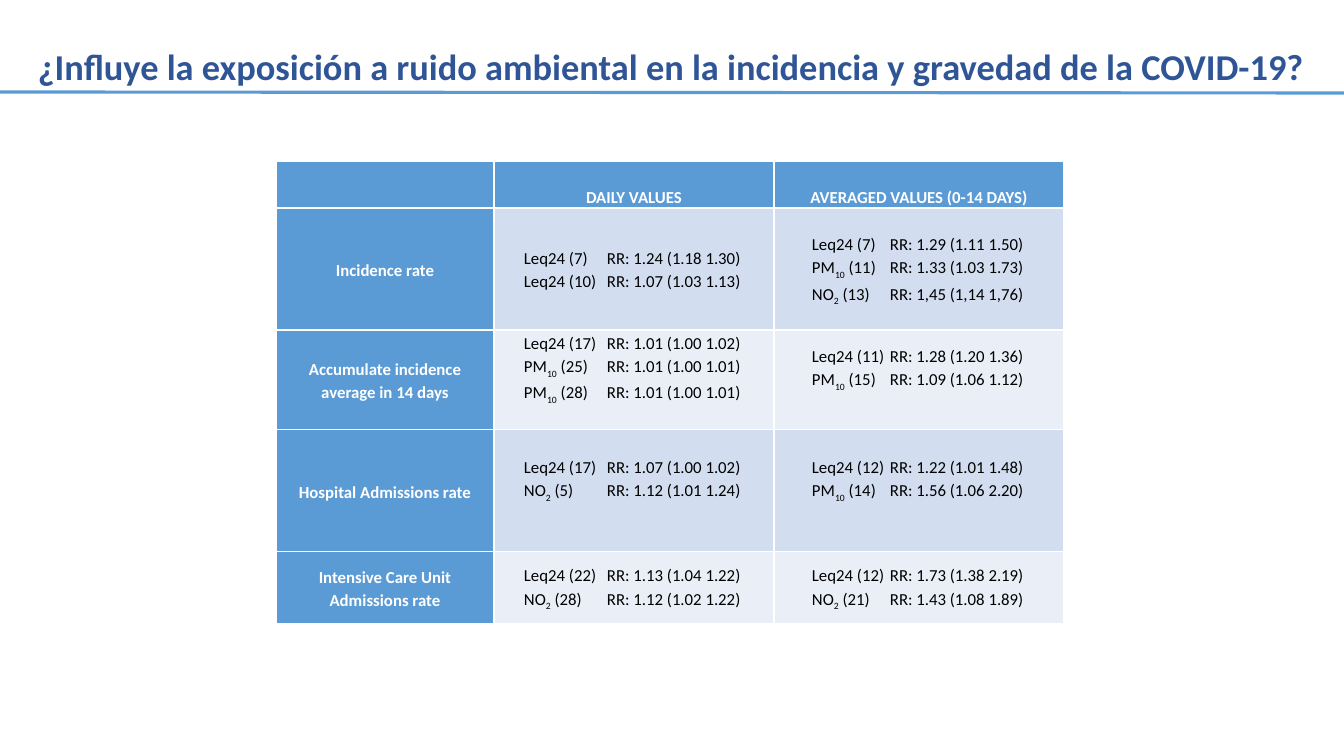
"""Slide with a table of COVID-19 risk ratios for noise and air pollution."""
from dataclasses import dataclass

from lxml import etree
from pptx import Presentation
from pptx.dml.color import RGBColor
from pptx.enum import shapes, text
from pptx.oxml import ns
from pptx.util import Pt

NAVY = RGBColor(0x2F, 0x55, 0x97)
BLUE = RGBColor(0x5B, 0x9B, 0xD5)
BAND = RGBColor(0xD2, 0xDE, 0xEF)
PALE = RGBColor(0xEA, 0xEF, 0xF7)
WHITE = RGBColor(0xFF, 0xFF, 0xFF)
BLACK = RGBColor(0, 0, 0)

WIDE, HIGH = 1344, 756
COLS = (218, 280, 290)
HEAD = 47
PAD = 7
LINE = 24


@dataclass(frozen=True)
class Risk:
    """Agent with its subscript, lag in days and risk ratio."""
    name: str
    sub: str
    lag: int
    ratio: str


@dataclass(frozen=True)
class Block:
    """Cell of risks with the lift from its middle, in px."""
    risks: tuple[Risk, ...]
    lift: int = 0


@dataclass(frozen=True)
class Rate:
    """Table row for one rate."""
    label: str
    high: int
    daily: Block
    mean: Block


@dataclass(frozen=True)
class Place:
    """Left margin and tab stop of a risk column, in px."""
    left: int
    tab: int


def leq(lag: int, ratio: str) -> Risk:
    """Return a noise risk."""
    return Risk("Leq24", "", lag, ratio)


def pm(lag: int, ratio: str) -> Risk:
    """Return a particle risk."""
    return Risk("PM", "10", lag, ratio)


def no(lag: int, ratio: str) -> Risk:
    """Return a nitrogen dioxide risk."""
    return Risk("NO", "2", lag, ratio)


PLACES = (Place(30, 83), Place(38, 78))
HEADS = ("", "DAILY VALUES", "AVERAGED VALUES (0-14 DAYS)")
RATES = (
    Rate("Incidence rate", 122,
         Block((leq(7, "1.24 (1.18 1.30)"), leq(10, "1.07 (1.03 1.13)"))),
         Block((leq(7, "1.29 (1.11 1.50)"), pm(11, "1.33 (1.03 1.73)"),
                no(13, "1,45 (1,14 1,76)")))),
    Rate("Accumulate incidence average in 14 days", 99,
         Block((leq(17, "1.01 (1.00 1.02)"), pm(25, "1.01 (1.00 1.01)"),
                pm(28, "1.01 (1.00 1.01)")), LINE),
         Block((leq(11, "1.28 (1.20 1.36)"), pm(15, "1.09 (1.06 1.12)")), LINE)),
    Rate("Hospital Admissions rate", 122,
         Block((leq(17, "1.07 (1.00 1.02)"), no(5, "1.12 (1.01 1.24)")), LINE),
         Block((leq(12, "1.22 (1.01 1.48)"), pm(14, "1.56 (1.06 2.20)")), LINE)),
    Rate("Intensive Care Unit Admissions rate", 72,
         Block((leq(22, "1.13 (1.04 1.22)"), no(28, "1.12 (1.02 1.22)"))),
         Block((leq(12, "1.73 (1.38 2.19)"), no(21, "1.43 (1.08 1.89)")))),
)


def px(count: int) -> int:
    """Turn px into EMU."""
    return round(count * 12192000 / WIDE)


def write(para, words: str, size: int = 12, color: RGBColor = BLACK,
          bold: bool = False, low: bool = False) -> None:
    """Add a run of text to a paragraph."""
    run = para.add_run()
    run.text = words
    font = run.font
    font.name, font.size, font.bold = "Calibri", Pt(size), bold
    font.color.rgb = color
    if low:
        run._r.get_or_add_rPr().set("baseline", "-25000")


def dress(cell, fill: RGBColor, left: int = PAD, lift: int = 0,
          anchor=text.MSO_ANCHOR.MIDDLE) -> None:
    """Set the fill, margins and anchor of a cell."""
    cell.fill.solid()
    cell.fill.fore_color.rgb = fill
    cell.margin_left, cell.margin_right = px(left), px(PAD)
    cell.margin_top, cell.margin_bottom = 0, px(lift)
    cell.vertical_anchor = anchor


def label(cell, words: str, anchor=text.MSO_ANCHOR.MIDDLE) -> None:
    """Fill a heading cell."""
    dress(cell, BLUE, anchor=anchor)
    para = cell.text_frame.paragraphs[0]
    para.alignment = text.PP_ALIGN.CENTER
    para.line_spacing = 1.15
    write(para, words, color=WHITE, bold=True)


def stop(para, at: int) -> None:
    """Give a paragraph one left tab stop."""
    tabs = etree.SubElement(para._p.get_or_add_pPr(), ns.qn("a:tabLst"))
    etree.SubElement(tabs, ns.qn("a:tab"), pos=str(px(at)), algn="l")


def block(cell, data: Block, place: Place, fill: RGBColor) -> None:
    """Fill a cell with its risks, one a line."""
    dress(cell, fill, place.left, data.lift)
    frame = cell.text_frame
    for num, risk in enumerate(data.risks):
        para = frame.add_paragraph() if num else frame.paragraphs[0]
        para.alignment = text.PP_ALIGN.LEFT
        para.line_spacing = 1.15
        stop(para, place.tab)
        write(para, risk.name)
        if risk.sub:
            write(para, risk.sub, low=True)
        write(para, f" ({risk.lag})\tRR: {risk.ratio}")


def title(slide) -> None:
    """Draw the title and its rule."""
    box = slide.shapes.add_textbox(0, px(9), px(WIDE), px(119))
    frame = box.text_frame
    frame.word_wrap = True
    frame.vertical_anchor = text.MSO_ANCHOR.MIDDLE
    para = frame.paragraphs[0]
    para.alignment = text.PP_ALIGN.CENTER
    para.line_spacing = 0.9
    write(para, "¿Influye la exposición a ruido ambiental en la incidencia "
          "y gravedad de la COVID-19?", size=26, color=NAVY, bold=True)
    rule = slide.shapes.add_connector(
        shapes.MSO_CONNECTOR.STRAIGHT, 0, px(92), px(WIDE), px(93))
    rule.line.color.rgb = BLUE
    rule.line.width = Pt(2.25)
    etree.SubElement(rule._element.spPr, ns.qn("a:effectLst"))


def chart(slide) -> None:
    """Draw the table of rates."""
    highs = (HEAD, *(rate.high for rate in RATES))
    table = slide.shapes.add_table(
        len(highs), len(COLS), px(276), px(161), px(sum(COLS)), px(sum(highs))).table
    table.horz_banding = False
    for col, wide in zip(table.columns, COLS):
        col.width = px(wide)
    for row, high in zip(table.rows, highs):
        row.height = px(high)
    for col, words in enumerate(HEADS):
        label(table.cell(0, col), words, text.MSO_ANCHOR.BOTTOM)
    for row, rate in enumerate(RATES, 1):
        label(table.cell(row, 0), rate.label)
        fill = BAND if row % 2 else PALE
        for col, data in enumerate((rate.daily, rate.mean), 1):
            block(table.cell(row, col), data, PLACES[col - 1], fill)


def main() -> None:
    """Build and save the slide."""
    deck = Presentation()
    deck.slide_width, deck.slide_height = px(WIDE), px(HIGH)
    slide = deck.slides.add_slide(deck.slide_layouts[6])
    title(slide)
    chart(slide)
    deck.save("out.pptx")


if __name__ == "__main__":
    main()
